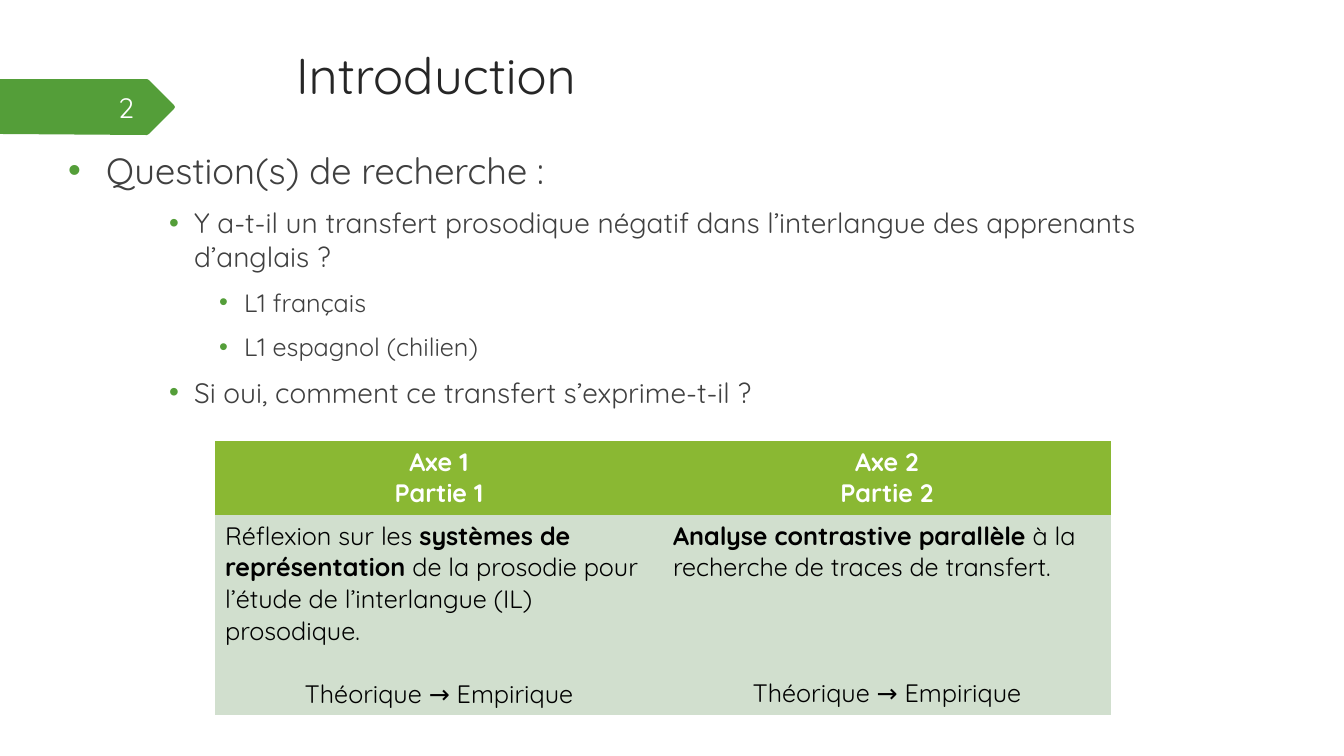
import dataclasses

import lxml.etree
import pptx
import pptx.dml.color
import pptx.enum.text
import pptx.oxml.ns
import pptx.util

RGBColor = pptx.dml.color.RGBColor
Align = pptx.enum.text.PP_ALIGN
Anchor = pptx.enum.text.MSO_ANCHOR
qn = pptx.oxml.ns.qn

EMU_PER_PX = 914400 / 100.8
FONT = "Quicksand"
GREEN = RGBColor(0x54, 0x9E, 0x39)
LIME = RGBColor(0x8A, 0xB8, 0x33)
PALE_GREEN = RGBColor(0xD1, 0xDF, 0xCE)
TITLE_GREY = RGBColor(0x26, 0x26, 0x26)
BODY_GREY = RGBColor(0x40, 0x40, 0x40)
BLACK = RGBColor(0, 0, 0)
WHITE = RGBColor(0xFF, 0xFF, 0xFF)
NUMBER_WHITE = RGBColor(0xFE, 0xFF, 0xFF)
TABLE_SIZE = 18
TABLE_LINE = 22.5  # points per line of table text
PLAIN_TABLE_STYLE = "{2D5ABB26-0587-4C30-8999-92F81FD0307C}"


@dataclasses.dataclass(frozen=True)
class BulletLevel:
    level: int
    size: int
    margin: int
    hanging: int


@dataclasses.dataclass(frozen=True)
class Bullet:
    text: str
    style: BulletLevel


@dataclasses.dataclass(frozen=True)
class Phrase:
    text: str
    bold: bool = False


@dataclasses.dataclass(frozen=True)
class Axis:
    heading: tuple[str, str]
    description: tuple[Phrase, ...]
    approach: str
    gap_lines: int


QUESTION = BulletLevel(0, 26, 38, 38)
SUBQUESTION = BulletLevel(2, 20, 126, 25)
LANGUAGE = BulletLevel(3, 18, 176, 25)

BULLETS = (
    Bullet("Question(s) de recherche :", QUESTION),
    Bullet("Y a-t-il un transfert prosodique négatif dans l’interlangue des "
           "apprenants d’anglais ?", SUBQUESTION),
    Bullet("L1 français", LANGUAGE),
    Bullet("L1 espagnol (chilien)", LANGUAGE),
    Bullet("Si oui, comment ce transfert s’exprime-t-il ?", SUBQUESTION),
)

AXES = (
    Axis(("Axe 1", "Partie 1"),
         (Phrase("Réflexion sur les "),
          Phrase("systèmes de représentation ", True),
          Phrase("de la prosodie pour l’étude de l’interlangue (IL) prosodique.")),
         "Théorique → Empirique", 1),
    Axis(("Axe 2", "Partie 2"),
         (Phrase("Analyse contrastive parallèle", True),
          Phrase(" à la recherche de traces de transfert.")),
         "Théorique → Empirique", 3),
)


def px(length: int) -> pptx.util.Emu:
    return pptx.util.Emu(round(length * EMU_PER_PX))


def place(shape, left: int, top: int, width: int, height: int) -> None:
    shape.left, shape.top = px(left), px(top)
    shape.width, shape.height = px(width), px(height)


def format_runs(paragraph, size: int, color: RGBColor, bold: bool = False) -> None:
    for run in paragraph.runs:
        run.font.name = FONT
        run.font.size = pptx.util.Pt(size)
        run.font.bold = bold
        run.font.color.rgb = color


def prepare_frame(frame, anchor) -> None:
    """Wrap the text and keep the box at its given size."""
    frame.word_wrap = True
    frame.auto_size = pptx.enum.text.MSO_AUTO_SIZE.NONE
    frame.vertical_anchor = anchor


def add_number_banner(slide) -> None:
    outline = ((147, 79), (149, 80), (174, 105), (175, 107), (174, 109),
               (149, 134), (147, 135), (0, 134))
    builder = slide.shapes.build_freeform(0, 79, scale=EMU_PER_PX)
    builder.add_line_segments(outline, close=True)
    banner = builder.convert_to_shape()
    banner.shadow.inherit = False
    banner.fill.solid()
    banner.fill.fore_color.rgb = GREEN
    banner.line.fill.background()

    number = slide.shapes.add_textbox(px(58), px(87), px(86), px(40)).text_frame
    prepare_frame(number, Anchor.MIDDLE)
    number.text = "2"
    number.paragraphs[0].alignment = Align.RIGHT
    format_runs(number.paragraphs[0], 20, NUMBER_WHITE)


def fill_title(title) -> None:
    place(title, 286, 39, 983, 96)
    prepare_frame(title.text_frame, Anchor.TOP)
    title.text_frame.text = "Introduction"
    title.text_frame.paragraphs[0].alignment = Align.LEFT
    format_runs(title.text_frame.paragraphs[0], 36, TITLE_GREY)


def set_bullet(paragraph, style: BulletLevel) -> None:
    properties = paragraph._p.get_or_add_pPr()
    properties.set("marL", str(px(style.margin)))
    properties.set("indent", str(-px(style.hanging)))
    color = lxml.etree.SubElement(properties, qn("a:buClr"))
    lxml.etree.SubElement(color, qn("a:srgbClr"), val=str(GREEN))
    lxml.etree.SubElement(properties, qn("a:buChar"), char="•")


def fill_body(body) -> None:
    place(body, 58, 143, 1210, 509)
    frame = body.text_frame
    prepare_frame(frame, Anchor.TOP)
    frame.text = "\n".join(bullet.text for bullet in BULLETS)
    for paragraph, bullet in zip(frame.paragraphs, BULLETS):
        paragraph.level = bullet.style.level
        paragraph.space_before = pptx.util.Pt(10)
        set_bullet(paragraph, bullet.style)
        format_runs(paragraph, bullet.style.size, BODY_GREY)


def fill_cell(cell, color: RGBColor) -> None:
    cell.fill.solid()
    cell.fill.fore_color.rgb = color


def fill_heading(cell, axis: Axis) -> None:
    fill_cell(cell, LIME)
    cell.text_frame.text = "\n".join(axis.heading)
    for paragraph in cell.text_frame.paragraphs:
        paragraph.alignment = Align.CENTER
        format_runs(paragraph, TABLE_SIZE, WHITE, True)


def fill_description(cell, axis: Axis) -> None:
    fill_cell(cell, PALE_GREEN)
    description = cell.text_frame.paragraphs[0]
    for phrase in axis.description:
        description.add_run().text = phrase.text
    format_runs(description, TABLE_SIZE, BLACK)
    for run, phrase in zip(description.runs, axis.description):
        run.font.bold = phrase.bold

    approach = cell.text_frame.add_paragraph()
    approach.text = axis.approach
    approach.alignment = Align.CENTER
    approach.space_before = pptx.util.Pt(axis.gap_lines * TABLE_LINE)
    format_runs(approach, TABLE_SIZE, BLACK)


def add_axes_table(slide) -> None:
    frame = slide.shapes.add_table(2, len(AXES), px(215), px(441), px(896), px(273))
    frame.element.find(".//" + qn("a:tableStyleId")).text = PLAIN_TABLE_STYLE
    table = frame.table
    table.horz_banding = False
    for row, height in zip(table.rows, (74, 199)):
        row.height = px(height)
    for column, axis in enumerate(AXES):
        fill_heading(table.cell(0, column), axis)
        fill_description(table.cell(1, column), axis)


def main() -> None:
    presentation = pptx.Presentation()
    presentation.slide_width, presentation.slide_height = px(1344), px(756)
    slide = presentation.slides.add_slide(presentation.slide_layouts[1])
    fill_title(slide.shapes.title)
    fill_body(slide.placeholders[1])
    add_number_banner(slide)
    add_axes_table(slide)
    presentation.save("out.pptx")


if __name__ == "__main__":
    main()
